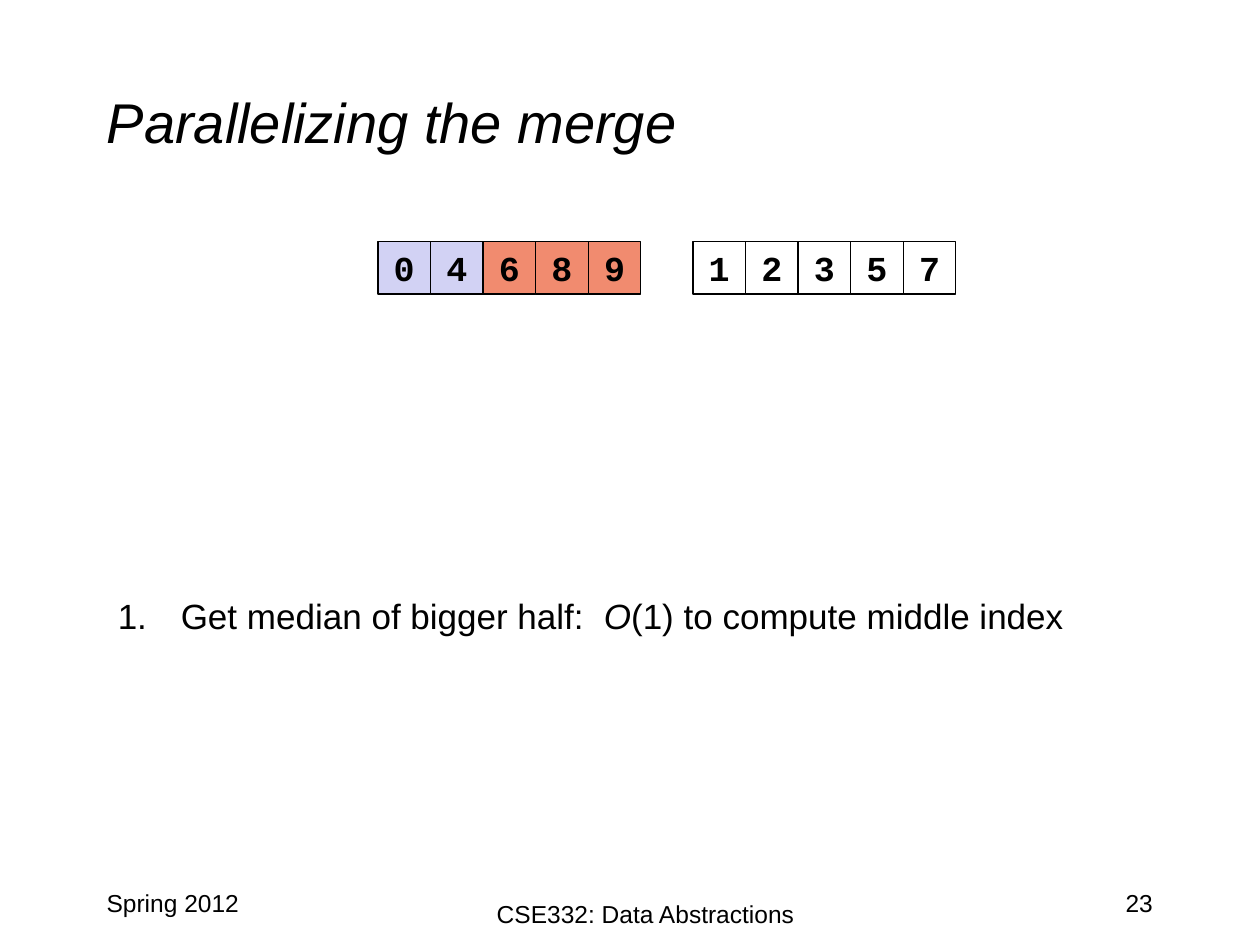
from lxml import etree
from pptx import Presentation
from pptx import util as u
from pptx.dml.color import RGBColor
from pptx.enum import shapes, text
from pptx.oxml.ns import qn

BLACK, LAVENDER, CORAL = "000000", "D2D2F4", "F18B6F"
LEFT, CENTER, RIGHT = text.PP_ALIGN.LEFT, text.PP_ALIGN.CENTER, text.PP_ALIGN.RIGHT
CELL = 1.06


def color(hex_value):
    """Turn a hex string into a colour."""
    return RGBColor.from_string(hex_value)


def place(part, box):
    """Move a part to a box of left, top, width and height in centimetres."""
    for side, length in zip(("left", "top", "width", "height"), box):
        setattr(part, side, u.Cm(length))


def write(paragraph, wording, size, align=LEFT, **format_values):
    """Add a formatted run to a paragraph."""
    paragraph.alignment = align
    run = paragraph.add_run()
    run.text = wording
    values = {"name": "Arial", "size": u.Pt(size), **format_values}
    for attribute, value in values.items():
        setattr(run.font, attribute, value)
    run.font.color.rgb = color(BLACK)


def add_heading(slide, box):
    """Fill the title placeholder."""
    heading = slide.shapes.title
    place(heading, box)
    heading.text_frame.vertical_anchor = text.MSO_ANCHOR.MIDDLE
    write(heading.text_frame.paragraphs[0], "Parallelizing the merge", 32, italic=True)


def add_array(slide, box, digits, fills):
    """Draw a sorted half as a row of adjoining cells."""
    left, top, width, height = box
    cell_width = width / len(digits)
    for index, (digit, fill) in enumerate(zip(digits, fills)):
        cell = slide.shapes.add_shape(shapes.MSO_SHAPE.RECTANGLE, 0, 0, 0, 0)
        place(cell, (left + index * cell_width, top, cell_width, height))
        cell.shadow.inherit = False
        if fill:
            cell.fill.solid()
            cell.fill.fore_color.rgb = color(fill)
        else:
            cell.fill.background()
        cell.line.color.rgb = color(BLACK)
        cell.line.width = u.Pt(0.75)
        cell.text_frame.word_wrap = False
        cell.text_frame.vertical_anchor = text.MSO_ANCHOR.MIDDLE
        write(cell.text_frame.paragraphs[0], digit, 20, CENTER, name="Courier New", bold=True)


def add_steps(slide, box):
    """Fill the body placeholder with the numbered step."""
    steps = slide.placeholders[1]
    place(steps, box)
    steps.text_frame.auto_size = text.MSO_AUTO_SIZE.NONE
    step = steps.text_frame.paragraphs[0]
    for wording, italic in (
        ("Get median of bigger half:  ", False),
        ("O", True),
        ("(1) to compute middle index", False),
    ):
        write(step, wording, 20, italic=italic)
    step.space_before = u.Pt(4)
    properties = step._p.get_or_add_pPr()
    properties.set("marL", str(u.Cm(1.27)))
    properties.set("indent", str(-u.Cm(1.27)))
    etree.SubElement(properties, qn("a:buFont"), typeface="Arial")
    etree.SubElement(properties, qn("a:buAutoNum"), type="arabicPeriod")


def add_footer(slide, box):
    """Write the term, course and page number along the bottom."""
    left, top, width, height = box
    side = 5.29
    for wording, align, part_box in (
        ("Spring 2012", LEFT, (left, top, side, height)),
        ("CSE332: Data Abstractions", CENTER, (left + 5.5, top + 0.21, 11.23, height)),
        ("23", RIGHT, (left + width - side, top, side, height)),
    ):
        note = slide.shapes.add_textbox(0, 0, 0, 0)
        place(note, part_box)
        note.text_frame.word_wrap = True
        write(note.text_frame.paragraphs[0], wording, 14, align)


def main():
    """Build and save the slide."""
    deck = Presentation()
    deck.slide_width, deck.slide_height = u.Cm(25.4), u.Cm(19.05)
    slide = deck.slides.add_slide(deck.slide_layouts[1])
    add_heading(slide, (1.9, 0.85, 21.59, 3.18))
    add_array(slide, (7.62, 4.87, 5 * CELL, CELL), "04689", [LAVENDER] * 2 + [CORAL] * 3)
    add_array(slide, (13.97, 4.87, 5 * CELL, CELL), "12357", [None] * 5)
    add_steps(slide, (2.12, 11.85, 21.59, 4.87))
    add_footer(slide, (1.9, 17.78, 21.59, 1.27))
    deck.save("out.pptx")


if __name__ == "__main__":
    main()
